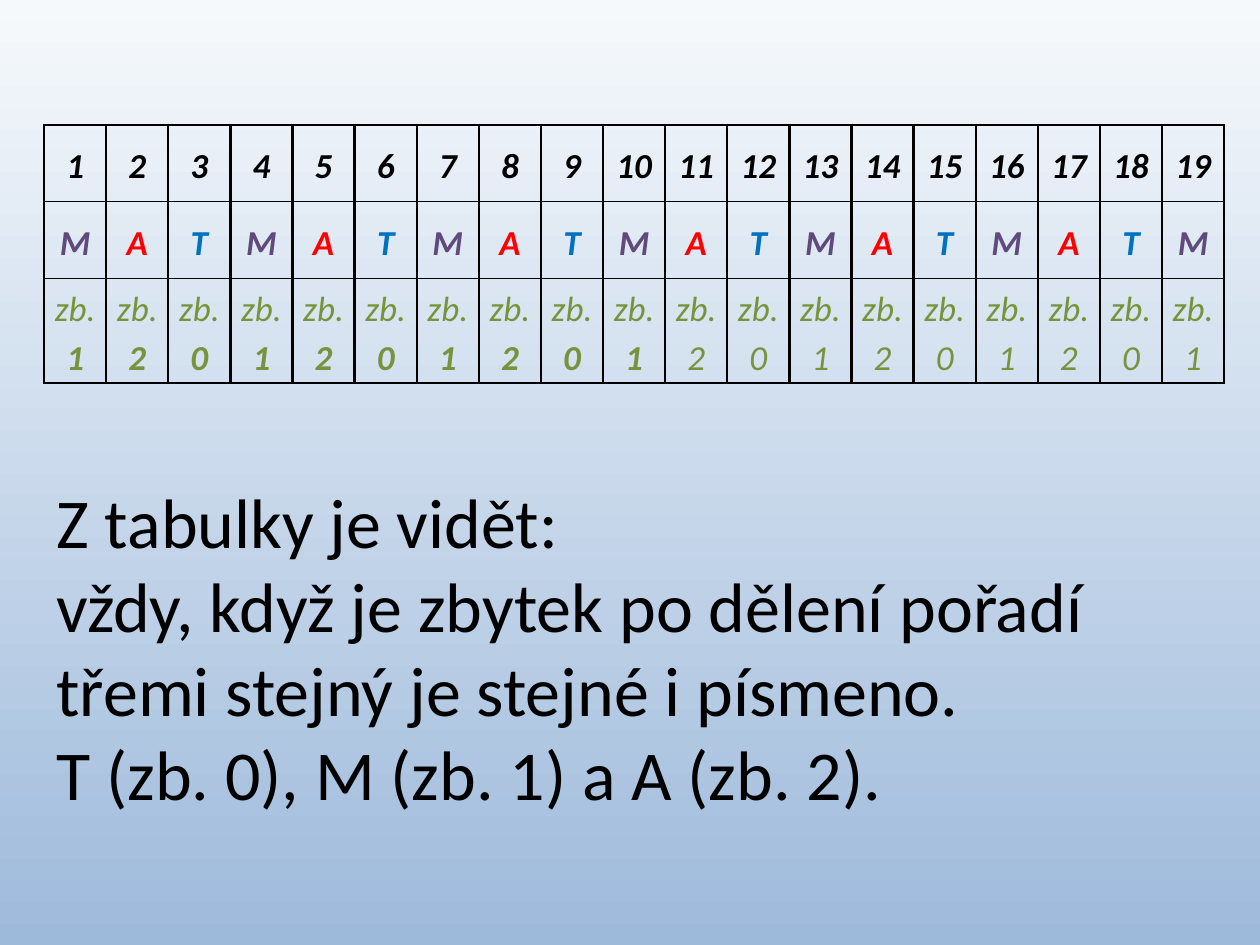
from dataclasses import dataclass

from lxml import etree
from pptx import Presentation
from pptx.dml.color import RGBColor
from pptx.enum.text import MSO_ANCHOR, PP_ALIGN
from pptx.oxml.ns import qn
from pptx.util import Inches, Pt

CENTER = PP_ALIGN.CENTER
MIDDLE = MSO_ANCHOR.MIDDLE


@dataclass(frozen=True)
class Theme:
    font: str = "Calibri"
    black: str = "000000"
    remainder: str = "77933C"
    letters: tuple = (("M", "604A7B"), ("A", "FF0000"), ("T", "0070C0"))
    bg_top: str = "F6F9FC"
    bg_bottom: str = "9EBADB"
    table_size: float = 20
    body_size: float = 40
    thick: float = 1.5
    thin: float = 1


class SlideBuilder:
    def __init__(self, slide, theme):
        self.s = slide
        self.theme = theme

    def background(self):
        fill = self.s.background.fill
        fill.gradient()
        fill.gradient_angle = 270
        for stop, color in zip(fill.gradient_stops, (self.theme.bg_top, self.theme.bg_bottom)):
            stop.color.rgb = RGBColor.from_string(color)

    def format_run(self, r, size, color, bold=False, italic=False):
        r.font.name = self.theme.font
        r.font.size = Pt(size)
        r.font.color.rgb = RGBColor.from_string(color)
        r.font.bold = bold
        r.font.italic = italic

    def text(self, lines, box):
        tf = self.s.shapes.add_textbox(*map(Inches, box)).text_frame
        tf.word_wrap = True
        tf.text = "\n".join(lines)
        for p in tf.paragraphs:
            for r in p.runs:
                self.format_run(r, self.theme.body_size, self.theme.black)

    def borders(self, cell, widths):
        """Draw the left, right, top and bottom lines, given in points."""
        tcPr = cell._tc.get_or_add_tcPr()
        for i, (side, width) in enumerate(zip("LRTB", widths)):
            ln = etree.Element(qn(f"a:ln{side}"), w=str(Pt(width)))
            fill = etree.SubElement(ln, qn("a:solidFill"))
            etree.SubElement(fill, qn("a:srgbClr"), val=self.theme.black)
            tcPr.insert(i, ln)

    def cell(self, cell, runs, color):
        """Fill a cell with (text, bold) runs."""
        cell.fill.background()
        cell.vertical_anchor = MIDDLE
        cell.margin_left = cell.margin_right = Inches(0.07)
        cell.margin_top = cell.margin_bottom = 0
        p = cell.text_frame.paragraphs[0]
        p.alignment = CENTER
        p.line_spacing = 1.15
        for text, bold in runs:
            r = p.add_run()
            r.text = text
            self.format_run(r, self.theme.table_size, color, bold, italic=True)

    def table(self, rows, box, heights):
        """Build a bordered table from rows of (runs, colour) pairs."""
        th = self.theme
        count = len(rows[0])
        table = self.s.shapes.add_table(len(rows), count, *map(Inches, box)).table
        table.first_row = table.horz_banding = False
        for col in table.columns:
            col.width = Inches(box[2] / count)
        for i, (row, height) in enumerate(zip(rows, heights)):
            table.rows[i].height = Inches(height)
            top = th.thick if i == 0 else th.thin
            bottom = th.thick if i == len(rows) - 1 else th.thin
            for j, (runs, color) in enumerate(row):
                cell = table.cell(i, j)
                self.cell(cell, runs, color)
                self.borders(cell, (th.thick, th.thick, top, bottom))


def remainder_rows(theme, last=19, last_bold=10):
    """Position, repeating letter and remainder after division by three."""
    numbers = range(1, last + 1)
    letters = [theme.letters[(n - 1) % 3] for n in numbers]
    return [
        [([(str(n), True)], theme.black) for n in numbers],
        [([(letter, True)], color) for letter, color in letters],
        [([("zb. ", False), (str(n % 3), n <= last_bold)], theme.remainder) for n in numbers],
    ]


def main():
    prs = Presentation()
    prs.slide_width, prs.slide_height = Inches(10), Inches(7.5)
    theme = Theme()
    slide = SlideBuilder(prs.slides.add_slide(prs.slide_layouts[6]), theme)
    slide.background()
    slide.table(remainder_rows(theme), (0.35, 0.99, 9.37, 2.05), (0.61, 0.61, 0.83))
    slide.text(
        [
            "Z tabulky je vidět:",
            "vždy, když je zbytek po dělení pořadí",
            "třemi stejný je stejné i písmeno.",
            "T (zb. 0), M (zb. 1) a A (zb. 2).",
        ],
        (0.35, 3.75, 9.37, 2.79),
    )
    prs.save("out.pptx")


if __name__ == "__main__":
    main()
